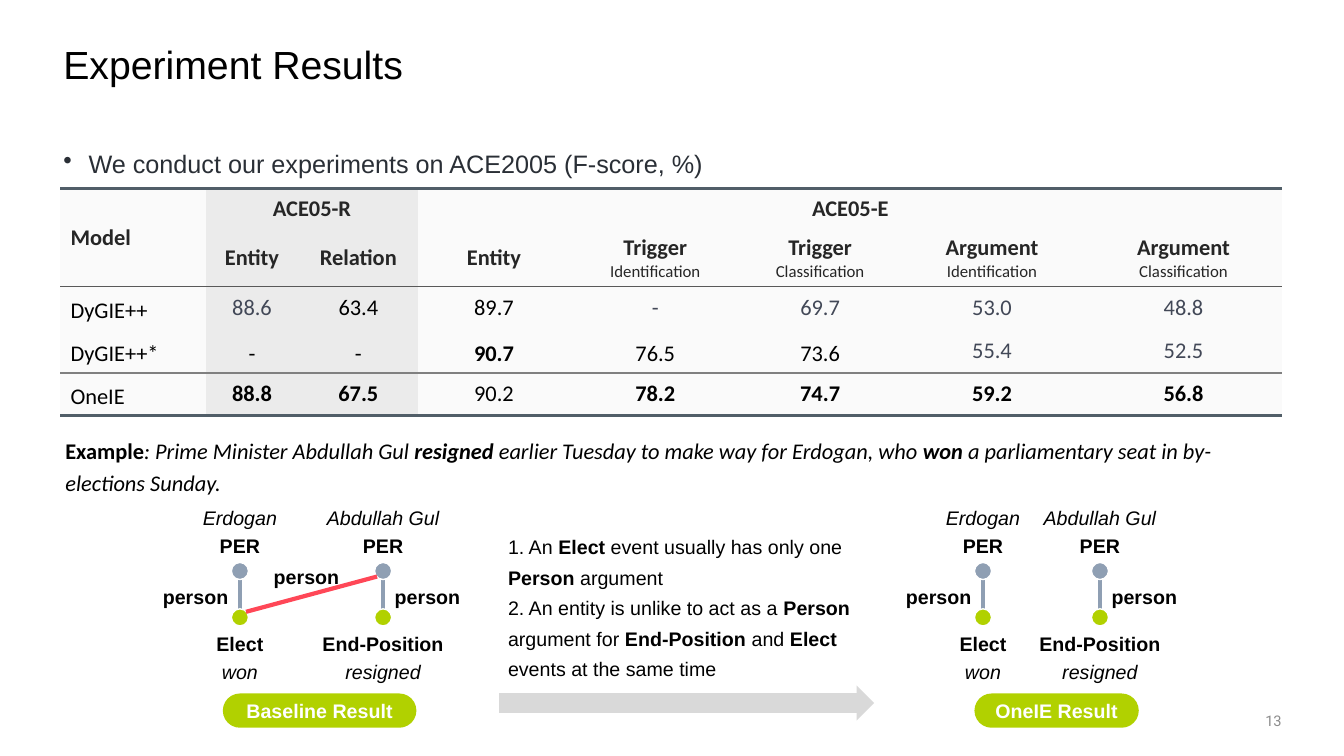
from dataclasses import dataclass

from lxml import etree
from pptx import Presentation
from pptx.dml.color import RGBColor
from pptx.enum.shapes import MSO_CONNECTOR, MSO_SHAPE
from pptx.enum.text import MSO_ANCHOR, PP_ALIGN
from pptx.oxml.ns import qn
from pptx.util import Inches, Pt

LEFT, CENTER, RIGHT = PP_ALIGN.LEFT, PP_ALIGN.CENTER, PP_ALIGN.RIGHT
TOP, MIDDLE = MSO_ANCHOR.TOP, MSO_ANCHOR.MIDDLE
STRAIGHT = MSO_CONNECTOR.STRAIGHT
OVAL, PILL, ARROW = MSO_SHAPE.OVAL, MSO_SHAPE.ROUNDED_RECTANGLE, MSO_SHAPE.RIGHT_ARROW
PLAIN_TABLE = "{2D5ABB26-0587-4C30-8999-92F81FD0307C}"


@dataclass(frozen=True)
class Theme:
    sans: str = "Arial"
    table_font: str = "Calibri"
    number_font: str = "Roboto"
    black: str = "000000"
    white: str = "FFFFFF"
    body: str = "2A2F36"
    muted: str = "8C8C8C"
    header: str = "262626"
    reported: str = "424857"
    pale: str = "FAFAFA"
    shaded: str = "EBEBEB"
    frame: str = "515E68"
    header_rule: str = "595959"
    model_rule: str = "808080"
    entity: str = "8F9FB3"
    event: str = "B1D100"
    wrong: str = "FF4757"
    arrow: str = "D9D9D9"
    title_size: float = 28
    body_size: float = 18
    table_size: float = 16
    task_size: float = 12
    label_size: float = 14
    number_size: float = 10.5


THEME = Theme()


@dataclass(frozen=True)
class Style:
    size: float
    color: str = THEME.black
    font: str = THEME.sans
    bold: bool = False
    italic: bool = False
    align: int = LEFT
    spacing: float = 1.0


@dataclass(frozen=True)
class Box:
    left: float
    top: float
    width: float
    height: float

    def emu(self) -> tuple:
        return tuple(Inches(v) for v in (self.left, self.top, self.width, self.height))


@dataclass(frozen=True)
class Pair:
    """An entity linked to an event; side places the role label."""
    x: float
    entity: str
    event: str
    trigger: str
    side: int


@dataclass(frozen=True)
class Result:
    caption: str
    caption_x: float
    caption_width: float
    pairs: tuple


LABEL = Style(THEME.label_size, align=CENTER)
STRONG = Style(THEME.label_size, bold=True, align=CENTER)
NAME = Style(THEME.label_size, italic=True, align=CENTER)
CAPTION = Style(THEME.label_size, THEME.white, bold=True, align=CENTER)

# Table content: "|" in a score marks bold, "~" marks the reported grey
COLUMNS = (1.44, 0.92, 1.19, 1.5, 1.7, 1.57, 1.84, 1.96)
ROWS = (0.4, 0.57, 0.43, 0.43, 0.42)
TASKS = ("Entity", "Relation", "Entity", "Trigger\nIdentification", "Trigger\nClassification",
         "Argument\nIdentification", "Argument\nClassification")
SCORES = (
    ("DyGIE++", "~88.6", "63.4", "89.7", "~-", "~69.7", "~53.0", "~48.8"),
    ("DyGIE++*", "-", "-", "|90.7", "76.5", "73.6", "~55.4", "~52.5"),
    ("OneIE", "|88.8", "|67.5", "90.2", "|78.2", "|74.7", "|59.2", "|56.8"),
)
TOP_RULES = {0: (THEME.frame, 2.25), 4: (THEME.model_rule, 1)}
BOTTOM_RULES = {1: (THEME.header_rule, 1), 3: (THEME.model_rule, 1), 4: (THEME.frame, 2.25)}

RESULTS = (
    Result("Baseline Result", 3.17, 1.92, (
        Pair(2.38, "Erdogan", "Elect", "won", -1),
        Pair(3.8, "Abdullah Gul", "End-Position", "resigned", 1))),
    Result("OneIE Result", 10.48, 1.63, (
        Pair(9.75, "Erdogan", "Elect", "won", -1),
        Pair(10.91, "Abdullah Gul", "End-Position", "resigned", 1))),
)
DOT = 0.17
ENTITY_Y, EVENT_Y = 5.58, 6.04


def rgb(color: str) -> RGBColor:
    return RGBColor.from_string(color)


def style_paragraph(paragraph, style: Style) -> None:
    paragraph.alignment = style.align
    paragraph.line_spacing = style.spacing
    font = paragraph.font
    font.name, font.size = style.font, Pt(style.size)
    font.bold, font.italic = style.bold, style.italic
    font.color.rgb = rgb(style.color)


def write(frame, text: str, style: Style) -> None:
    """Fill a frame, one paragraph per line; text between bars is bold."""
    for i, line in enumerate(text.split("\n")):
        paragraph = frame.add_paragraph() if i else frame.paragraphs[0]
        for j, part in enumerate(line.split("|")):
            if part:
                run = paragraph.add_run()
                run.text = part
                if j % 2:
                    run.font.bold = True
        style_paragraph(paragraph, style)


def add_text(slide, box: Box, text: str, style: Style, anchor=TOP):
    frame = slide.shapes.add_textbox(*box.emu()).text_frame
    frame.word_wrap = True
    frame.vertical_anchor = anchor
    write(frame, text, style)
    return frame


def add_label(slide, x: float, top: float, text: str, style: Style, width: float = 1.6) -> None:
    add_text(slide, Box(x - width / 2, top, width, 0.34), text, style)


def add_filled(slide, kind, box: Box, color: str, outline: str = ""):
    shape = slide.shapes.add_shape(kind, *box.emu())
    shape.shadow.inherit = False
    shape.fill.solid()
    shape.fill.fore_color.rgb = rgb(color)
    if outline:
        shape.line.color.rgb = rgb(outline)
        shape.line.width = Pt(1)
    else:
        shape.line.fill.background()
    return shape


def add_link(slide, start: tuple, end: tuple, color: str) -> None:
    link = slide.shapes.add_connector(STRAIGHT, *(Inches(v) for v in start + end))
    link.line.color.rgb = rgb(color)
    link.line.width = Pt(3)
    etree.SubElement(link._element.spPr, qn("a:effectLst"))


def add_rule(cell, edge: str, color: str, width: float) -> None:
    line = etree.SubElement(cell._tc.get_or_add_tcPr(), qn(f"a:{edge}"), w=str(Pt(width)))
    fill = etree.SubElement(line, qn("a:solidFill"))
    etree.SubElement(fill, qn("a:srgbClr"), val=color)


def add_scores(slide) -> None:
    box = Box(0.6, 1.87, sum(COLUMNS), sum(ROWS))
    table = slide.shapes.add_table(len(ROWS), len(COLUMNS), *box.emu()).table
    table.first_row = table.horz_banding = False
    table._tbl.tblPr.find(qn("a:tableStyleId")).text = PLAIN_TABLE
    for column, width in zip(table.columns, COLUMNS):
        column.width = Inches(width)
    for row, height in zip(table.rows, ROWS):
        row.height = Inches(height)

    header = Style(THEME.table_size, THEME.header, THEME.table_font, bold=True, align=CENTER)
    grid = (("Model", "ACE05-R", "", "ACE05-E", "", "", "", ""), ("",) + TASKS) + SCORES
    for r, texts in enumerate(grid):
        for c, text in enumerate(texts):
            cell = table.cell(r, c)
            bottom = BOTTOM_RULES.get(1 if (r, c) == (0, 0) else r)
            for edge, rule in (("lnT", TOP_RULES.get(r)), ("lnB", bottom)):
                if rule:
                    add_rule(cell, edge, *rule)
            cell.fill.solid()
            cell.fill.fore_color.rgb = rgb(THEME.shaded if c in (1, 2) else THEME.pale)
            cell.vertical_anchor = MIDDLE
            style = header
            if r > 1:
                reported = text.startswith("~")
                loose = c == 0 or (r == 3 and not reported)
                style = Style(THEME.table_size, THEME.reported if reported else THEME.black,
                              THEME.table_font, text.startswith("|"),
                              align=CENTER if c else LEFT, spacing=1.2 if loose else 1.0)
            elif c == 0:
                style = Style(THEME.table_size, THEME.header, THEME.table_font, bold=True)
            if text:
                write(cell.text_frame, text.lstrip("~|"), style)
            for task in cell.text_frame.paragraphs[1:]:
                style_paragraph(task, Style(THEME.task_size, THEME.header, THEME.table_font, align=CENTER))
    table.cell(0, 0).merge(table.cell(1, 0))
    table.cell(0, 1).merge(table.cell(0, 2))
    table.cell(0, 3).merge(table.cell(0, 7))


def add_result(slide, result: Result) -> None:
    for pair in result.pairs:
        add_link(slide, (pair.x, ENTITY_Y + DOT), (pair.x, EVENT_Y), THEME.entity)
        for top, color in ((ENTITY_Y, THEME.entity), (EVENT_Y, THEME.event)):
            add_filled(slide, OVAL, Box(pair.x - DOT / 2, top, DOT, DOT), color, THEME.white)
        for top, text, style in ((4.97, pair.entity, NAME), (5.25, "PER", STRONG),
                                 (6.22, pair.event, STRONG), (6.5, pair.trigger, NAME)):
            add_label(slide, pair.x, top, text, style)
        add_label(slide, pair.x + pair.side * 0.44, 5.75, "person", STRONG, 1.04)
    box = Box(result.caption_x - result.caption_width / 2, 6.88, result.caption_width, 0.34)
    caption = add_filled(slide, PILL, box, THEME.event)
    caption.adjustments[0] = 0.5
    caption.text_frame.vertical_anchor = MIDDLE
    write(caption.text_frame, result.caption, CAPTION)


def main() -> None:
    deck = Presentation()
    deck.slide_width, deck.slide_height = Inches(13.33), Inches(7.5)
    slide = deck.slides.add_slide(deck.slide_layouts[6])

    # Title, bullet and page number
    add_text(slide, Box(0.53, 0.4, 12.28, 0.69), "Experiment Results", Style(THEME.title_size, spacing=0.9))
    intro = add_text(slide, Box(0.53, 1.36, 12.28, 0.5), "", Style(THEME.body_size))
    bullet = intro.paragraphs[0]._p.get_or_add_pPr()
    bullet.set("marL", str(Inches(0.25)))
    bullet.set("indent", str(-Inches(0.25)))
    bullet.insert(1, etree.Element(qn("a:buChar"), char="•"))
    write(intro, "We conduct our experiments on ACE2005 (F-score, %)",
          Style(THEME.body_size, THEME.body, spacing=1.2))
    add_text(slide, Box(9.42, 6.95, 3.39, 0.4), "13",
             Style(THEME.number_size, THEME.muted, THEME.number_font, align=RIGHT), MIDDLE)

    # Scores and example sentence
    add_scores(slide)
    example = add_text(
        slide, Box(0.55, 4.23, 12.22, 0.77),
        "|Example|: Prime Minister Abdullah Gul |resigned| earlier Tuesday to make way for Erdogan, "
        "who |won| a parliamentary seat in by-elections Sunday.",
        Style(THEME.table_size, font=THEME.table_font, italic=True, spacing=1.2))
    example.paragraphs[0].runs[0].font.italic = False

    # Result graphs, with the wrong link of the baseline
    for result in RESULTS:
        add_result(slide, result)
    add_link(slide, (3.74, 5.72), (2.44, 6.07), THEME.wrong)
    add_label(slide, 3.04, 5.56, "person", STRONG, 0.97)

    # Explanation between the graphs
    arrow = add_filled(slide, ARROW, Box(4.95, 6.8, 3.72, 0.35), THEME.arrow)
    arrow.adjustments[0], arrow.adjustments[1] = 0.56, 0.5
    add_text(slide, Box(4.94, 5.19, 3.68, 1.61),
             "1. An |Elect| event usually has only one |Person| argument\n"
             "2. An entity is unlike to act as a |Person| argument for |End-Position| and |Elect| "
             "events at the same time", Style(THEME.label_size, spacing=1.3))

    deck.save("out.pptx")


if __name__ == "__main__":
    main()
